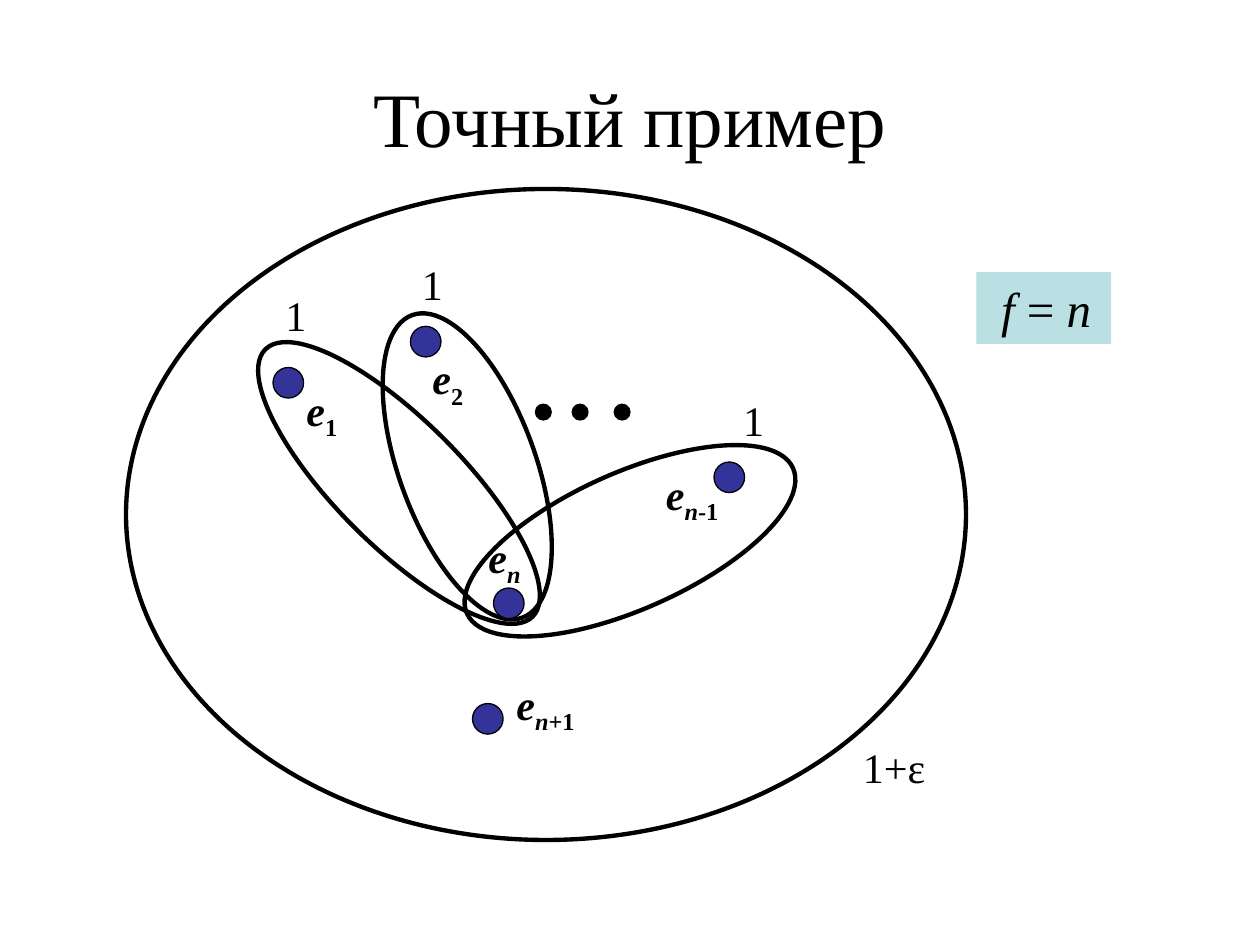
from pptx import Presentation
from pptx import util as u
from pptx.dml.color import RGBColor
from pptx.enum import shapes, text

BLACK = RGBColor(0, 0, 0)
INDIGO = RGBColor(0x33, 0x33, 0x99)
PALE_TEAL = RGBColor(0xBB, 0xE0, 0xE3)
FONT = "Times New Roman"
OVAL = shapes.MSO_SHAPE.OVAL


def write(frame, spans, size=24, bold=False, align=text.PP_ALIGN.LEFT,
          anchor=text.MSO_ANCHOR.TOP, wrap=False, fit=text.MSO_AUTO_SIZE.SHAPE_TO_FIT_TEXT):
    frame.word_wrap = wrap
    frame.auto_size = fit
    frame.vertical_anchor = anchor
    para = frame.paragraphs[0]
    para.alignment = align
    for words, style in spans:
        span = para.add_run()
        span.text = words
        span.font.name = FONT
        span.font.size = u.Pt(size)
        span.font.bold = bold
        span.font.italic = "i" in style
        span.font.color.rgb = BLACK
        if "s" in style:
            span.font._element.set("baseline", "-25000")


def draw(kind, left, top, width, height, fill=None, line=None, turn=0):
    shape = page.shapes.add_shape(kind, u.Pt(left), u.Pt(top), u.Pt(width), u.Pt(height))
    shape.shadow.inherit = False
    shape.rotation = turn
    if fill is None:
        shape.fill.background()
    else:
        shape.fill.solid()
        shape.fill.fore_color.rgb = fill
    if line is None:
        shape.line.fill.background()
    else:
        shape.line.color.rgb = BLACK
        shape.line.width = u.Pt(line)
    return shape


deck = Presentation()
deck.slide_width, deck.slide_height = u.Pt(720), u.Pt(540)
page = deck.slides.add_slide(deck.slide_layouts[5])

title = page.shapes.title
title.left, title.top, title.width, title.height = u.Pt(36), u.Pt(21.6), u.Pt(648), u.Pt(90)
write(title.text_frame, [("Точный пример", "")], size=44, wrap=True,
      align=text.PP_ALIGN.CENTER, anchor=text.MSO_ANCHOR.MIDDLE, fit=text.MSO_AUTO_SIZE.NONE)

sets = [
    (120, 240, 216, 72, 45),
    (175, 227.5, 184, 78, 70),
    (258, 270, 204, 78, 156),
    (72, 108, 480, 372, 0),
]
for left, top, width, height, turn in sets:
    draw(OVAL, left, top, width, height, line=2.5, turn=turn)

for left, top in [(270, 402), (156, 210), (408, 264), (282, 336), (234.5, 186.5)]:
    draw(OVAL, left, top, 17.5, 17.5, fill=INDIGO, line=0.75)

for left in (306, 327, 351):
    draw(OVAL, left, 231, 9, 9, fill=BLACK, line=0.75)

weights = [("1", 156, 162, 26.5), ("1", 234, 144, 26.5), ("1", 417.5, 222, 26.5),
           ("1+ε", 486, 420, 50.5)]
elements = [
    ([("1", "s")], 168, 216, 33),
    ([("2", "s")], 240, 198, 33),
    ([("n", "is"), ("-1", "s")], 373.5, 264, 47.5),
    ([("n", "is")], 272, 300, 34),
    ([("n", "is"), ("+1", "s")], 288, 384, 51),
]
labels = [([(words, "")], left, top, width, False) for words, left, top, width in weights]
labels += [([("e", "i")] + index, left, top, width, True) for index, left, top, width in elements]
for spans, left, top, width, bold in labels:
    box = page.shapes.add_textbox(u.Pt(left), u.Pt(top), u.Pt(width), u.Pt(36))
    write(box.text_frame, spans, bold=bold)

formula = draw(shapes.MSO_SHAPE.RECTANGLE, 558, 155.5, 77, 41, fill=PALE_TEAL)
write(formula.text_frame, [(" f ", "i"), ("= ", ""), ("n", "i")], size=28, wrap=True)

deck.save("out.pptx")
